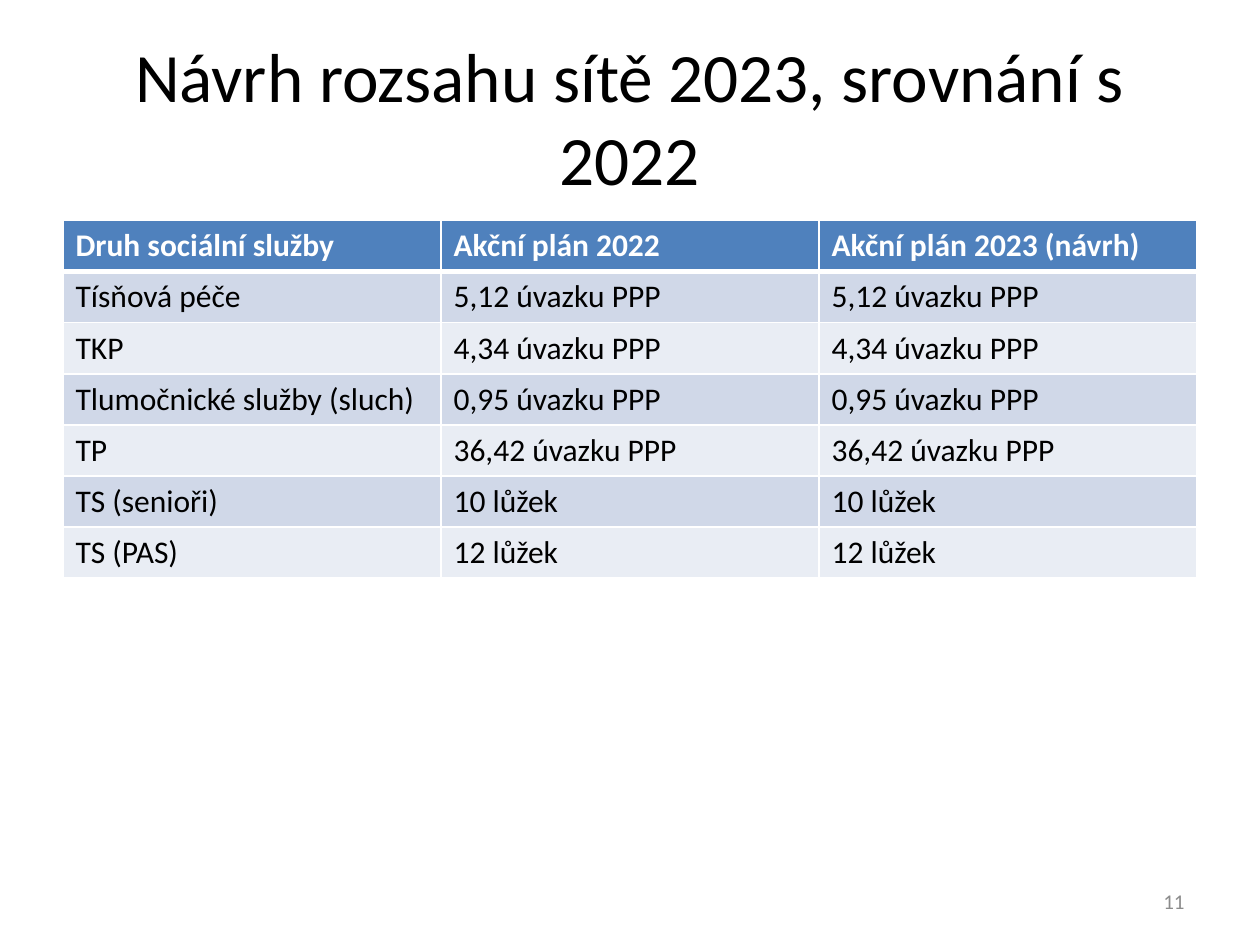
from dataclasses import dataclass

from lxml import etree
from pptx import Presentation
from pptx import util as u
from pptx.dml.color import RGBColor
from pptx.enum import text
from pptx.oxml import ns


@dataclass(frozen=True)
class Theme:
    font: str = "Calibri"
    ink: str = "000000"
    white: str = "FFFFFF"
    muted: str = "8C8C8C"
    header: str = "4F81BD"
    bands: tuple = ("D0D8E8", "E9EDF4")
    title_size: float = 39.6
    table_size: float = 18
    number_size: float = 12
    grid_width: float = 1
    header_rule_width: float = 3


THEME = Theme()
HEADINGS = ("Druh sociální služby", "Akční plán 2022", "Akční plán 2023 (návrh)")
SERVICES = (
    ("Tísňová péče", "5,12 úvazku PPP", "5,12 úvazku PPP"),
    ("TKP", "4,34 úvazku PPP", "4,34 úvazku PPP"),
    ("Tlumočnické služby (sluch)", "0,95 úvazku PPP", "0,95 úvazku PPP"),
    ("TP", "36,42 úvazku PPP", "36,42 úvazku PPP"),
    ("TS (senioři)", "10 lůžek", "10 lůžek"),
    ("TS (PAS)", "12 lůžek", "12 lůžek"),
)


def write(paragraph, wording, size, color, bold=False):
    run = paragraph.add_run()
    run.text = wording
    font_format = {"name": THEME.font, "size": u.Pt(size), "bold": bold}
    for attribute, value in font_format.items():
        setattr(run.font, attribute, value)
    run.font.color.rgb = RGBColor.from_string(color)


def add_label(slide, box, wording, size, color, align):
    frame = slide.shapes.add_textbox(*map(u.Inches, box)).text_frame
    frame_format = {
        "word_wrap": True,
        "auto_size": text.MSO_AUTO_SIZE.NONE,
        "vertical_anchor": text.MSO_ANCHOR.MIDDLE,
    }
    for attribute, value in frame_format.items():
        setattr(frame, attribute, value)
    frame.paragraphs[0].alignment = align
    write(frame.paragraphs[0], wording, size, color)


def add_border(cell, side, width):
    properties = cell._tc.get_or_add_tcPr()
    line = etree.SubElement(properties, ns.qn(f"a:ln{side}"), w=str(u.Pt(width)))
    fill = etree.SubElement(line, ns.qn("a:solidFill"))
    etree.SubElement(fill, ns.qn("a:srgbClr"), val=THEME.white)


def style_cell(cell, wording, row):
    is_header = row == 0
    widths = dict.fromkeys("LRTB", THEME.grid_width)
    if is_header:
        widths["B"] = THEME.header_rule_width
    elif row == 1:
        widths["T"] = THEME.header_rule_width
    for side, width in widths.items():
        add_border(cell, side, width)
    background = THEME.header if is_header else THEME.bands[(row - 1) % 2]
    cell.fill.solid()
    cell.fill.fore_color.rgb = RGBColor.from_string(background)
    color = THEME.white if is_header else THEME.ink
    write(cell.text_frame.paragraphs[0], wording, THEME.table_size, color, is_header)


def add_comparison(slide, box, rows):
    frame = slide.shapes.add_table(len(rows), len(rows[0]), *map(u.Inches, box))
    for row, wordings in enumerate(rows):
        for column, wording in enumerate(wordings):
            style_cell(frame.table.cell(row, column), wording, row)


def main():
    deck = Presentation()
    deck.slide_width, deck.slide_height = u.Inches(10), u.Inches(7.5)
    slide = deck.slides.add_slide(deck.slide_layouts[6])
    add_label(slide, (0.5, 0.3, 9, 1.25), "Návrh rozsahu sítě 2023, srovnání s 2022",
              THEME.title_size, THEME.ink, text.PP_ALIGN.CENTER)
    add_comparison(slide, (0.5, 1.75, 9, 2.84), (HEADINGS, *SERVICES))
    add_label(slide, (7.17, 6.95, 2.33, 0.4), "11",
              THEME.number_size, THEME.muted, text.PP_ALIGN.RIGHT)
    deck.save("out.pptx")


if __name__ == "__main__":
    main()
